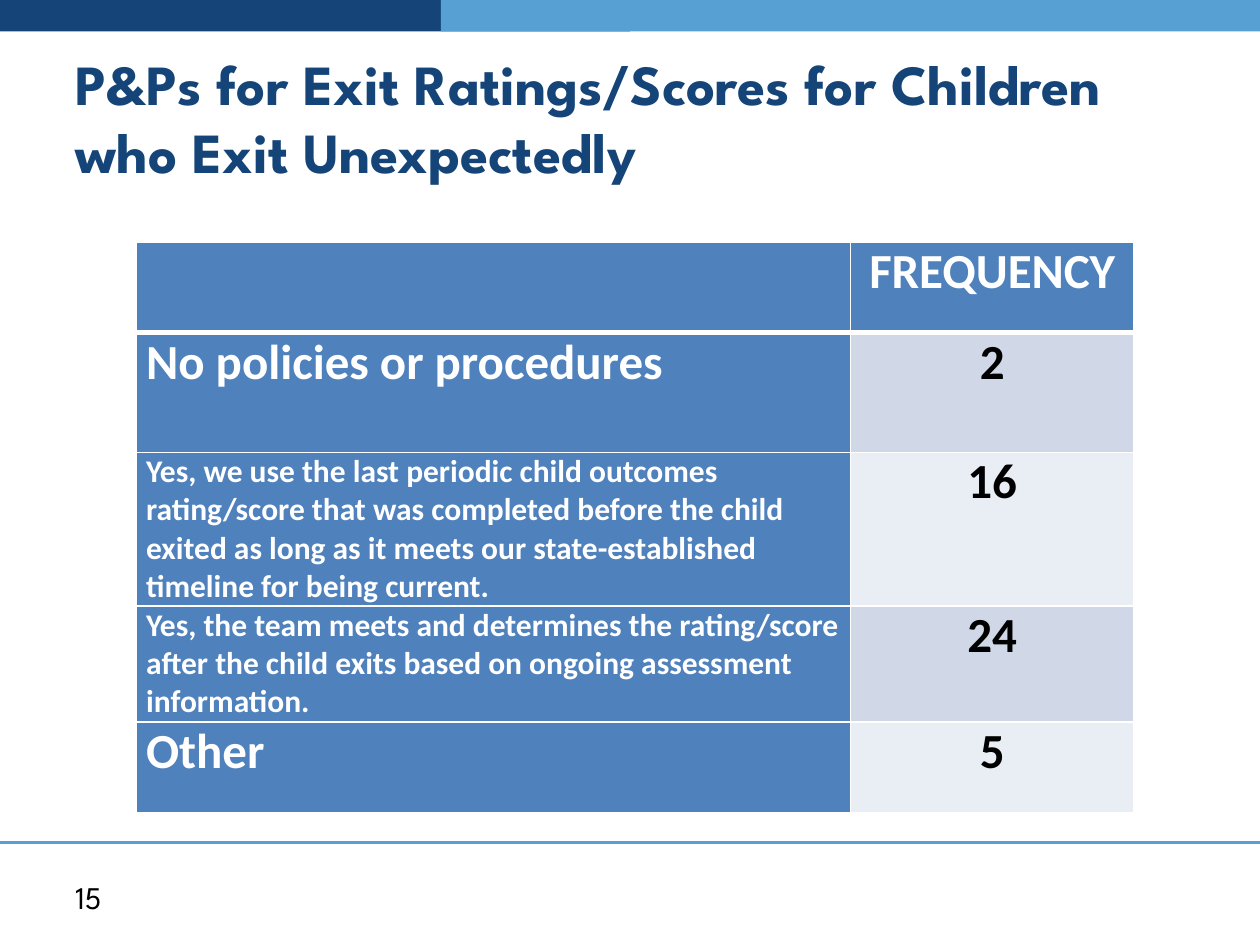
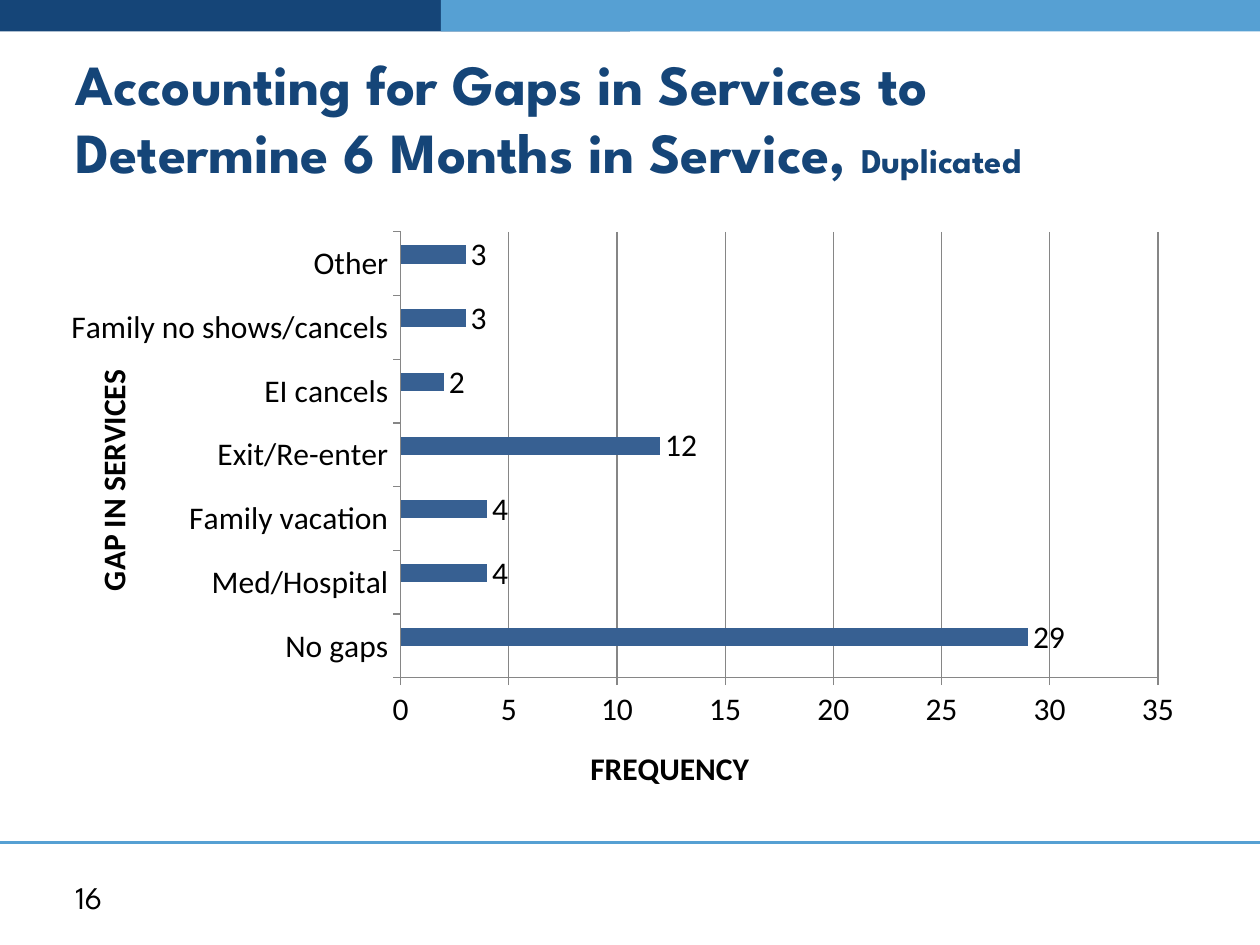
from dataclasses import dataclass

from lxml import etree
from pptx import Presentation
from pptx.chart.data import CategoryChartData
from pptx.dml.color import RGBColor
from pptx.enum.chart import XL_CHART_TYPE, XL_LABEL_POSITION, XL_TICK_MARK
from pptx.enum.shapes import MSO_CONNECTOR, MSO_SHAPE
from pptx.enum.text import MSO_ANCHOR, MSO_AUTO_SIZE, PP_ALIGN
from pptx.oxml.ns import qn
from pptx.util import Inches, Pt

BAR_CLUSTERED = XL_CHART_TYPE.BAR_CLUSTERED
OUTSIDE_END = XL_LABEL_POSITION.OUTSIDE_END
TICK_OUTSIDE, TICK_NONE = XL_TICK_MARK.OUTSIDE, XL_TICK_MARK.NONE
STRAIGHT = MSO_CONNECTOR.STRAIGHT
RECTANGLE = MSO_SHAPE.RECTANGLE
MIDDLE, TOP = MSO_ANCHOR.MIDDLE, MSO_ANCHOR.TOP
NO_AUTOFIT = MSO_AUTO_SIZE.NONE
LEFT, CENTER = PP_ALIGN.LEFT, PP_ALIGN.CENTER
TITLE_ONLY_LAYOUT = 5


@dataclass(frozen=True)
class Theme:
    navy: str = "154578"
    sky: str = "56A0D3"
    white: str = "FFFFFF"
    black: str = "000000"
    header: str = "4F81BD"
    rows: tuple = ("D0D8E8", "E9EDF4")
    bar: str = "376092"
    grid: str = "868686"
    heading_font: str = "League Spartan"
    body_font: str = "Calibri"
    title: float = 32.4
    title_note: float = 19.8
    large: float = 28
    body: float = 18


THEME = Theme()
SLIDE_SIZE = (10, 7.5)
BAND_TOP, BAND_HEIGHT = -1.25, 1.5
NAVY_WIDTH, SKY_LEFT = 5, 3.5
FOOTER_RULE_Y = 6.69
TITLE_BOX = (0.5, 0.3, 9, 1.25)
NUMBER_BOX = (0.5, 6.92, 2.33, 0.4)
TABLE_BOX = (1.08, 1.92, 7.92, 4.53)
CHART_BOX = (0.5, 1.75, 9, 4.75)

FREQUENCY_COLUMN = 2.25
POLICY_ROW_HEIGHTS = (0.72, 0.95, 1.22, 0.92, 0.72)
POLICIES = [
    ("", "FREQUENCY", THEME.large),
    ("No policies or procedures", "2", THEME.large),
    ("Yes, we use the last periodic child outcomes rating/score that was "
     "completed before the child exited as long as it meets our "
     "state-established timeline for being current.", "16", THEME.body),
    ("Yes, the team meets and determines the rating/score after the child "
     "exits based on ongoing assessment information.", "24", THEME.body),
    ("Other", "5", THEME.large),
]

GAPS = {
    "No gaps": 29,
    "Med/Hospital": 4,
    "Family vacation": 4,
    "Exit/Re-enter": 12,
    "EI cancels": 2,
    "Family no shows/cancels": 3,
    "Other": 3,
}


def rgb(color):
    return RGBColor.from_string(color)


def inches(box):
    return [Inches(length) for length in box]


def set_font(font, name, size, color, bold=False):
    font.name, font.size, font.bold = name, Pt(size), bold
    font.color.rgb = rgb(color)


def add_band(slide, left, width, color):
    band = slide.shapes.add_shape(
        RECTANGLE, *inches((left, BAND_TOP, width, BAND_HEIGHT)))
    band.shadow.inherit = False
    band.fill.solid()
    band.fill.fore_color.rgb = rgb(color)
    band.line.fill.background()


def add_frame(slide, number):
    """Draw the top bands, the footer rule and the slide number."""
    width = SLIDE_SIZE[0]
    add_band(slide, 0, NAVY_WIDTH, THEME.navy)
    add_band(slide, SKY_LEFT, width - SKY_LEFT, THEME.sky)

    rule = slide.shapes.add_connector(
        STRAIGHT, *inches((0, FOOTER_RULE_Y, width, FOOTER_RULE_Y)))
    rule.line.color.rgb = rgb(THEME.sky)
    rule.line.width = Pt(1.75)
    etree.SubElement(rule.element.spPr, qn("a:effectLst"))

    frame = slide.shapes.add_textbox(*inches(NUMBER_BOX)).text_frame
    frame.word_wrap = True
    frame.vertical_anchor = MIDDLE
    frame.text = str(number)
    set_font(frame.paragraphs[0].font, THEME.heading_font, THEME.body, THEME.black)


def add_title(slide, box, text, note=""):
    title = slide.shapes.title
    title.left, title.top, title.width, title.height = inches(box)
    frame = title.text_frame
    frame.word_wrap = True
    frame.auto_size = NO_AUTOFIT
    frame.vertical_anchor = MIDDLE
    heading = frame.paragraphs[0]
    heading.alignment = LEFT
    set_font(heading.font, THEME.heading_font, THEME.title, THEME.navy, bold=True)
    heading.add_run().text = text
    if note:
        small_note = heading.add_run()
        small_note.text = note
        small_note.font.size = Pt(THEME.title_note)


def add_borders(cell, **widths):
    properties = cell._tc.get_or_add_tcPr()
    for side in "LRTB":
        border = etree.SubElement(properties, qn(f"a:ln{side}"),
                                  w=str(Pt(widths.get(side, 1))))
        fill = etree.SubElement(border, qn("a:solidFill"))
        etree.SubElement(fill, qn("a:srgbClr"), val=THEME.white)


def fill_cell(cell, text, size, color, fill, alignment):
    cell.fill.solid()
    cell.fill.fore_color.rgb = rgb(fill)
    cell.margin_left = cell.margin_right = Inches(0.08)
    cell.margin_top = cell.margin_bottom = 0
    cell.vertical_anchor = TOP
    cell.text = text
    paragraph = cell.text_frame.paragraphs[0]
    paragraph.alignment = alignment
    set_font(paragraph.font, THEME.body_font, size, color, bold=True)


def add_policy_table(slide, box):
    table = slide.shapes.add_table(len(POLICIES), 2, *inches(box)).table
    table.columns[0].width = Inches(box[2] - FREQUENCY_COLUMN)
    table.columns[1].width = Inches(FREQUENCY_COLUMN)
    for index, (policy, frequency, size) in enumerate(POLICIES):
        table.rows[index].height = Inches(POLICY_ROW_HEIGHTS[index])
        policy_cell, frequency_cell = table.rows[index].cells
        for cell in (policy_cell, frequency_cell):
            add_borders(cell, T=3 if index == 1 else 1, B=3 if index == 0 else 1)
        fill_cell(policy_cell, policy, size, THEME.white, THEME.header, LEFT)
        color, fill = ((THEME.black, THEME.rows[(index - 1) % 2]) if index
                       else (THEME.white, THEME.header))
        fill_cell(frequency_cell, frequency, THEME.large, color, fill, CENTER)


def set_layout(parent, index, box, **lengths):
    """Fix a chart part's place, in inches from the chart's corner."""
    layout = parent.find(qn("c:layout"))
    if layout is None:
        layout = etree.Element(qn("c:layout"))
        parent.insert(index, layout)
    manual = etree.SubElement(layout, qn("c:manualLayout"))
    if "w" in lengths:
        etree.SubElement(manual, qn("c:layoutTarget"), val="inner")
    for mode in ("xMode", "yMode"):
        etree.SubElement(manual, qn(f"c:{mode}"), val="edge")
    for key, length in lengths.items():
        whole = box[2] if key in "xw" else box[3]
        etree.SubElement(manual, qn(f"c:{key}"), val=str(length / whole))


def style_axis(axis, title, box, x, y):
    axis.major_tick_mark, axis.minor_tick_mark = TICK_OUTSIDE, TICK_NONE
    axis.format.line.color.rgb = rgb(THEME.grid)
    set_font(axis.tick_labels.font, THEME.body_font, THEME.body, THEME.black)
    frame = axis.axis_title.text_frame
    frame.text = title
    set_font(frame.paragraphs[0].font, THEME.body_font, THEME.body,
             THEME.black, bold=True)
    set_layout(axis.axis_title.element, 1, box, x=x, y=y)


def add_gap_chart(slide, box):
    data = CategoryChartData()
    data.categories = list(GAPS)
    data.add_series("Series 1", [None] * len(GAPS))
    data.add_series("Series 2", list(GAPS.values()))
    chart = slide.shapes.add_chart(BAR_CLUSTERED, *inches(box), data).chart
    chart.has_legend = chart.has_title = False
    set_font(chart.font, THEME.body_font, 10, THEME.black)

    plot = chart.plots[0]
    plot.vary_by_categories = False
    plot.gap_width, plot.overlap = 150, 0
    for series, color in zip(plot.series, (THEME.header, THEME.bar)):
        series.format.fill.solid()
        series.format.fill.fore_color.rgb = rgb(color)
        labels = series.data_labels
        labels.show_value = True
        labels.position = OUTSIDE_END
        set_font(labels.font, THEME.body_font, THEME.body, THEME.black)

    style_axis(chart.category_axis, "GAP IN SERVICES", box, x=0.18, y=1.14)
    style_axis(chart.value_axis, "FREQUENCY", box, x=4.14, y=4.13)
    chart.category_axis.has_major_gridlines = False
    values = chart.value_axis
    values.minimum_scale, values.maximum_scale, values.major_unit = 0, 35, 5
    values.has_major_gridlines = True
    values.major_gridlines.format.line.color.rgb = rgb(THEME.grid)
    plot_area = chart.element.find(f".//{qn('c:plotArea')}")
    set_layout(plot_area, 0, box, x=2.68, y=0.09, w=6.01, h=3.54)


def add_slide(deck, number, title, note=""):
    slide = deck.slides.add_slide(deck.slide_layouts[TITLE_ONLY_LAYOUT])
    add_frame(slide, number)
    add_title(slide, TITLE_BOX, title, note)
    return slide


def main():
    deck = Presentation()
    deck.slide_width, deck.slide_height = inches(SLIDE_SIZE)

    policies = add_slide(
        deck, 15, "P&Ps for Exit Ratings/Scores for Children who Exit Unexpectedly")
    add_policy_table(policies, TABLE_BOX)

    gaps = add_slide(
        deck, 16,
        "Accounting for Gaps in Services to Determine 6 Months in Service, ",
        "Duplicated")
    add_gap_chart(gaps, CHART_BOX)

    deck.save("out.pptx")


if __name__ == "__main__":
    main()
